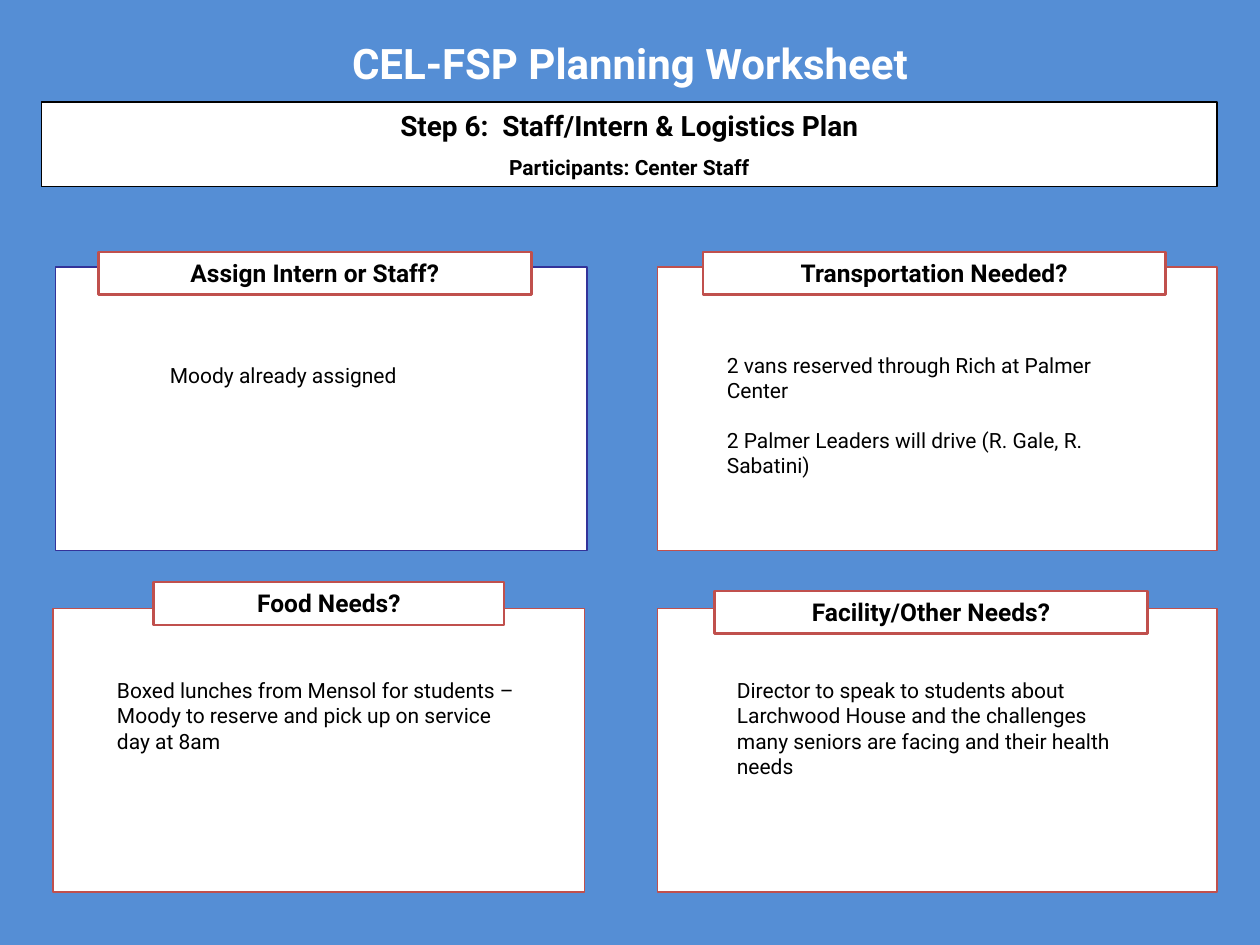
from pptx import Presentation
from pptx.dml.color import RGBColor
from pptx.enum.shapes import MSO_SHAPE
from pptx.enum.text import MSO_ANCHOR, PP_ALIGN
from pptx.util import Inches, Pt

RECTANGLE = MSO_SHAPE.RECTANGLE
TOP = MSO_ANCHOR.TOP
LEFT, CENTER = PP_ALIGN.LEFT, PP_ALIGN.CENTER

THEME = {
    "font": "Roboto",
    "background": "558ED5", "white": "FFFFFF", "black": "000000",
    "red": "C0504D", "navy": "333399",
    "title": 24, "step": 16, "label": 14, "body": 12,
    "header_gap": 7, "note_gap": 14,
}

TITLE = "CEL-FSP Planning Worksheet"
STEP = "Step 6:  Staff/Intern & Logistics Plan"
PARTICIPANTS = "Participants: Center Staff"

# Positions are (left, top, width, height) in inches.
SECTIONS = [
    {"heading": "Assign Intern or Staff?", "border": "navy",
     "panel": (0.44, 2.12, 4.22, 2.25), "label": (0.78, 2, 3.44, 0.34),
     "note": (1.25, 2.83, 2.25, 0.3),
     "lines": ["Moody already assigned"]},
    {"heading": "Transportation Needed?", "border": "red",
     "panel": (5.22, 2.12, 4.44, 2.25), "label": (5.58, 2, 3.67, 0.34),
     "note": (5.67, 2.75, 3.42, 1.11),
     "lines": ["2 vans reserved through Rich at Palmer Center",
               "2 Palmer Leaders will drive (R. Gale, R. Sabatini)"]},
    {"heading": "Food Needs?", "border": "red",
     "panel": (0.42, 4.83, 4.22, 2.25), "label": (1.22, 4.62, 2.78, 0.34),
     "note": (0.83, 5.33, 3.42, 0.71),
     "lines": ["Boxed lunches from Mensol for students – Moody to reserve "
               "and pick up on service day at 8am"]},
    {"heading": "Facility/Other Needs?", "border": "red",
     "panel": (5.22, 4.83, 4.44, 2.25), "label": (5.67, 4.69, 3.44, 0.34),
     "note": (5.75, 5.33, 3.42, 0.91),
     "lines": ["Director to speak to students about Larchwood House and the "
               "challenges many seniors are facing and their health needs"]},
]


def color(name):
    return RGBColor.from_string(THEME[name])


def add_box(page, position, border, weight):
    box = page.shapes.add_shape(RECTANGLE, *map(Inches, position))
    box.shadow.inherit = False
    box.fill.solid()
    box.fill.fore_color.rgb = color("white")
    box.line.color.rgb = color(border)
    box.line.width = Pt(weight)
    return box


def add_text_box(page, position):
    return page.shapes.add_textbox(*map(Inches, position))


def write(box, lines, align=CENTER, bold=True, ink="black", gap=0):
    """Fill a box with (text, theme size) lines, spaced apart by gap points."""
    frame = box.text_frame
    frame.word_wrap = True
    frame.vertical_anchor = TOP
    frame.text = "\n".join(text for text, _ in lines)
    for index, (para, (_, size)) in enumerate(zip(frame.paragraphs, lines)):
        para.alignment = align
        para.space_before = Pt(gap if index else 0)
        font = para.runs[0].font
        font.name = THEME["font"]
        font.size = Pt(THEME[size])
        font.bold = bold
        font.color.rgb = color(ink)


def main():
    deck = Presentation()
    deck.slide_width, deck.slide_height = Inches(10), Inches(7.5)
    page = deck.slides.add_slide(deck.slide_layouts[6])
    page.background.fill.solid()
    page.background.fill.fore_color.rgb = color("background")

    title = add_text_box(page, (0, 0.25, 10, 0.51))
    write(title, [(TITLE, "title")], ink="white")
    header = add_box(page, (0.33, 0.81, 9.33, 0.67), "black", 1)
    write(header, [(STEP, "step"), (PARTICIPANTS, "body")],
          gap=THEME["header_gap"])

    for section in SECTIONS:
        add_box(page, section["panel"], section["border"], 0.75)
        label = add_box(page, section["label"], "red", 1.5)
        write(label, [(section["heading"], "label")])
        note = add_text_box(page, section["note"])
        write(note, [(line, "body") for line in section["lines"]],
              align=LEFT, bold=False, gap=THEME["note_gap"])

    deck.save("out.pptx")


if __name__ == "__main__":
    main()
